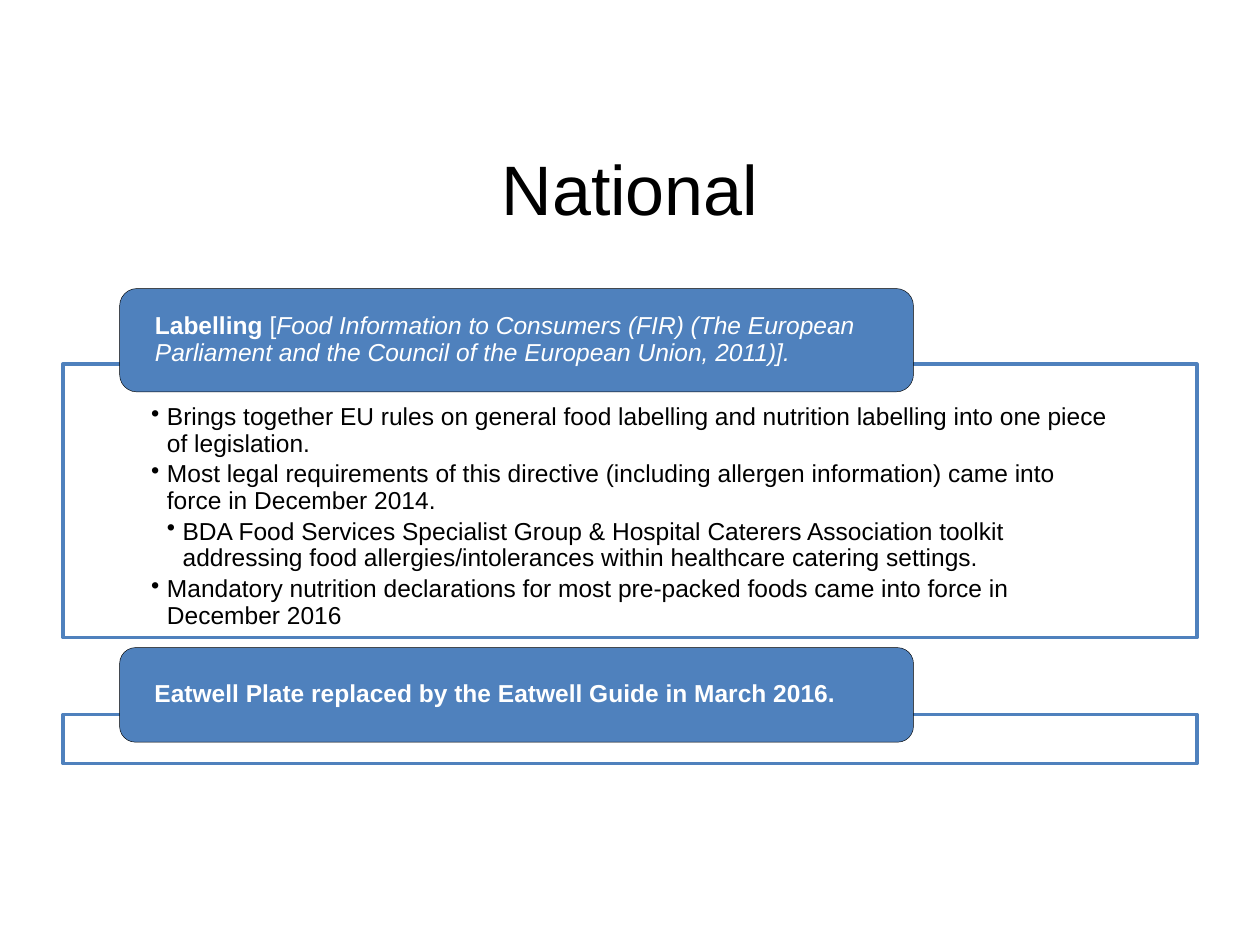
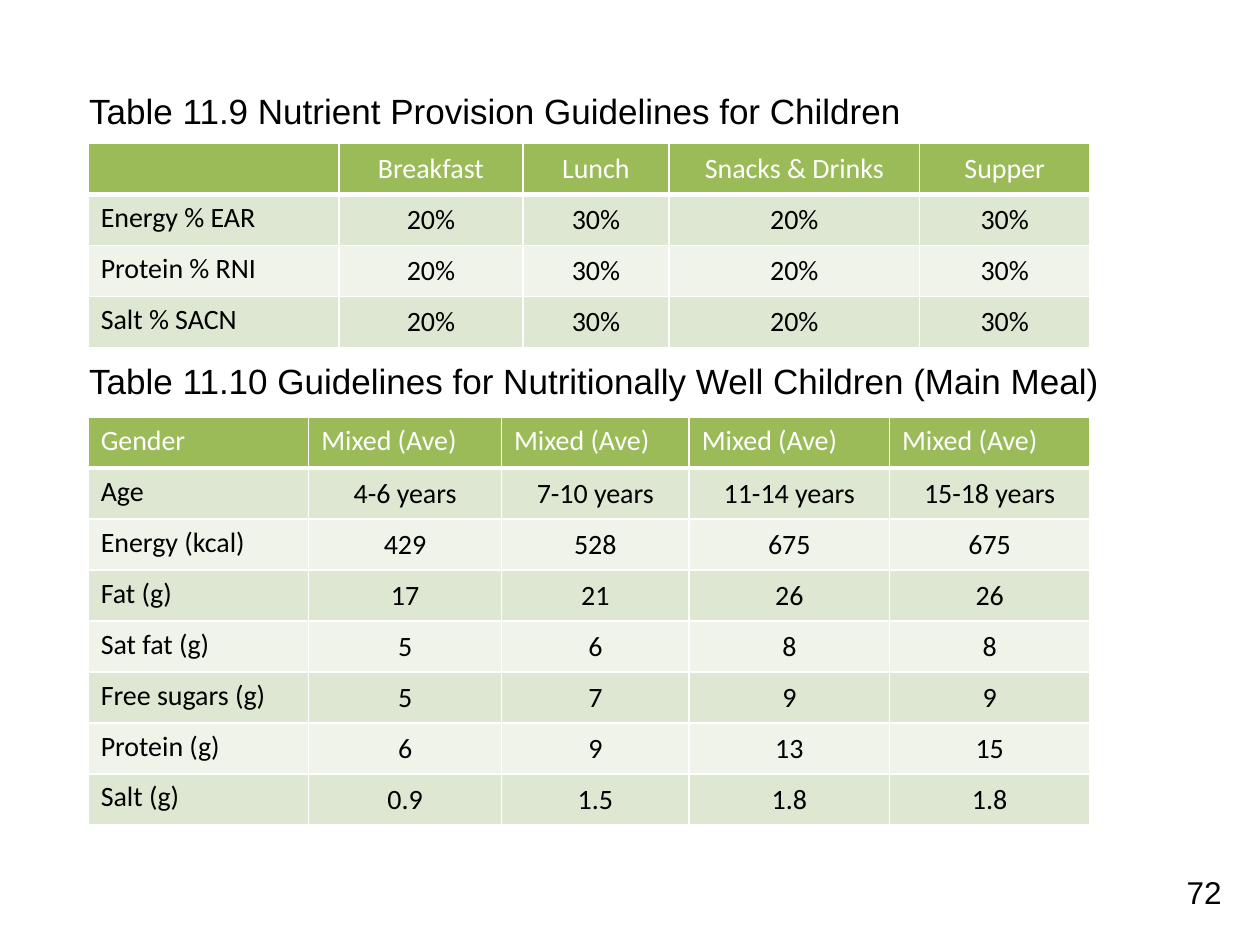
from lxml import etree
from pptx import Presentation
from pptx.dml.color import RGBColor
from pptx.enum.shapes import MSO_SHAPE
from pptx.enum.text import MSO_ANCHOR, PP_ALIGN
from pptx.oxml.ns import qn
from pptx.util import Inches, Pt

RECT, ROUND = MSO_SHAPE.RECTANGLE, MSO_SHAPE.ROUNDED_RECTANGLE
TOP, MIDDLE = MSO_ANCHOR.TOP, MSO_ANCHOR.MIDDLE
LEFT, CENTER = PP_ALIGN.LEFT, PP_ALIGN.CENTER
BLACK = RGBColor(0x00, 0x00, 0x00)
WHITE = RGBColor(0xFF, 0xFF, 0xFF)
BLUE = RGBColor(0x4F, 0x81, 0xBD)
GREEN = RGBColor(0x9B, 0xBB, 0x59)
BANDS = RGBColor(0xDE, 0xE7, 0xD1), RGBColor(0xEF, 0xF3, 0xEA)

LABEL = [
    ("Labelling", True, False),
    (" [", False, False),
    ("Food Information to Consumers (FIR) (The European Parliament and the "
     "Council of the European Union, 2011)].", False, True),
]
EATWELL = [("Eatwell Plate replaced by the Eatwell Guide in March 2016.", True, False)]
POINTS = [
    (1, "Brings together EU rules on general food labelling and nutrition "
        "labelling into one piece of legislation."),
    (1, "Most legal requirements of this directive (including allergen "
        "information) came into force in December 2014."),
    (2, "BDA Food Services Specialist Group & Hospital Caterers Association toolkit "
        "addressing food allergies/intolerances within healthcare catering settings."),
    (1, "Mandatory nutrition declarations for most pre-packed foods came into "
        "force in December 2016"),
]
PANELS = [
    {"head": LABEL, "tab": (2.29, 0.82), "box": (2.89, 2.17), "points": POINTS},
    {"head": EATWELL, "tab": (5.14, 0.75), "box": (5.67, 0.39), "points": []},
]

SHARES = ["20%", "30%", "20%", "30%"]
TABLES = [
    {"title": "Table 11.9 Nutrient Provision Guidelines for Children",
     "title_y": 0.66, "y": 1.14, "cols": [1.99, 1.46, 1.16, 1.99, 1.35],
     "head": (CENTER, MIDDLE),
     "rows": [["", "Breakfast", "Lunch", "Snacks & Drinks", "Supper"],
              ["Energy % EAR", *SHARES],
              ["Protein % RNI", *SHARES],
              ["Salt % SACN", *SHARES]]},
    {"title": "Table 11.10 Guidelines for Nutritionally Well Children (Main Meal)",
     "title_y": 2.8, "y": 3.31, "cols": [1.75, 1.53, 1.49, 1.59, 1.59],
     "head": (LEFT, TOP),
     "rows": [["Gender"] + ["Mixed (Ave)"] * 4,
              ["Age", "4-6 years", "7-10 years", "11-14 years", "15-18 years"],
              ["Energy (kcal)", "429", "528", "675", "675"],
              ["Fat (g)", "17", "21", "26", "26"],
              ["Sat fat (g)", "5", "6", "8", "8"],
              ["Free sugars (g)", "5", "7", "9", "9"],
              ["Protein (g)", "6", "9", "13", "15"],
              ["Salt (g)", "0.9", "1.5", "1.8", "1.8"]]},
]
ROW_H = 0.405


def add_run(para, text, size, color=BLACK, bold=False, italic=False, face="Arial"):
    run = para.add_run()
    run.text = text
    font = run.font
    font.name, font.size, font.bold, font.italic = face, Pt(size), bold, italic
    font.color.rgb = color


def add_text(slide, text, place, size, align=LEFT, anchor=TOP, wrap=True):
    frame = slide.shapes.add_textbox(*map(Inches, place)).text_frame
    frame.word_wrap, frame.vertical_anchor = wrap, anchor
    para = frame.paragraphs[0]
    para.alignment = align
    add_run(para, text, size)


def add_box(slide, kind, place, fill, line, width, margins, anchor):
    box = slide.shapes.add_shape(kind, *map(Inches, place))
    box.shadow.inherit = False
    box.fill.solid()
    box.fill.fore_color.rgb = fill
    box.line.color.rgb, box.line.width = line, Pt(width)
    frame = box.text_frame
    frame.word_wrap, frame.vertical_anchor = True, anchor
    (frame.margin_left, frame.margin_top,
     frame.margin_right, frame.margin_bottom) = map(Inches, margins)
    return frame


def add_bullet(para, level):
    props = para._p.get_or_add_pPr()
    props.set("marL", str(Inches(level / 8)))
    props.set("indent", str(-Inches(1 / 8)))
    etree.SubElement(props, qn("a:buChar"), char="•")


def add_panel(slide, panel):
    top, height = panel["box"]
    body = add_box(slide, RECT, (0.5, top, 9, height), WHITE, BLUE, 2,
                   (0.7, 0.32, 0.7, 0.11), TOP)
    for i, (level, text) in enumerate(panel["points"]):
        para = body.add_paragraph() if i else body.paragraphs[0]
        para.alignment, para.line_spacing, para.space_after = LEFT, 0.9, Pt(2.5)
        add_bullet(para, level)
        add_run(para, text, 14)
    top, height = panel["tab"]
    tab = add_box(slide, ROUND, (0.95, top, 6.3, height), BLUE, BLACK, 0.25,
                  (0.24, 0, 0.24, 0), MIDDLE)
    para = tab.paragraphs[0]
    para.alignment, para.line_spacing = LEFT, 0.9
    for text, bold, italic in panel["head"]:
        add_run(para, text, 14, WHITE, bold, italic)


def set_edges(cell, base):
    props = cell._tc.get_or_add_tcPr()
    for i, (side, width) in enumerate(zip("LRTB", (1, 1, 1, base))):
        line = etree.Element(qn(f"a:ln{side}"), w=str(Pt(width)))
        fill = etree.SubElement(line, qn("a:solidFill"))
        etree.SubElement(fill, qn("a:srgbClr"), val=str(WHITE))
        props.insert(i, line)


def add_grid(slide, data):
    rows, cols = data["rows"], data["cols"]
    place = map(Inches, (0.7, data["y"], sum(cols), ROW_H * len(rows)))
    table = slide.shapes.add_table(len(rows), len(cols), *place).table
    table.first_row = table.horz_banding = False
    for col, width in zip(table.columns, cols):
        col.width = Inches(width)
    for r, row in enumerate(rows):
        for c, text in enumerate(row):
            cell = table.cell(r, c)
            cell.fill.solid()
            cell.fill.fore_color.rgb = BANDS[(r - 1) % 2] if r else GREEN
            set_edges(cell, 1 if r else 3)
            para = cell.text_frame.paragraphs[0]
            if r == 0:
                para.alignment, cell.vertical_anchor = data["head"]
            elif c:
                para.alignment, cell.vertical_anchor = CENTER, MIDDLE
            if text:
                add_run(para, text, 16, BLACK if r else WHITE, face="Calibri")


def main():
    deck = Presentation()
    deck.slide_width, deck.slide_height = Inches(10), Inches(7.5)
    blank = deck.slide_layouts[6]

    slide = deck.slides.add_slide(blank)
    add_text(slide, "National", (0.5, 0.86, 9, 1.25), 40, CENTER, MIDDLE)
    for panel in PANELS:
        add_panel(slide, panel)

    slide = deck.slides.add_slide(blank)
    for data in TABLES:
        add_text(slide, data["title"], (0.61, data["title_y"], 9, 0.42), 20)
        add_grid(slide, data)
    add_text(slide, "72", (9.32, 6.88, 0.6, 0.4), 18, wrap=False)

    deck.save("out.pptx")


if __name__ == "__main__":
    main()
